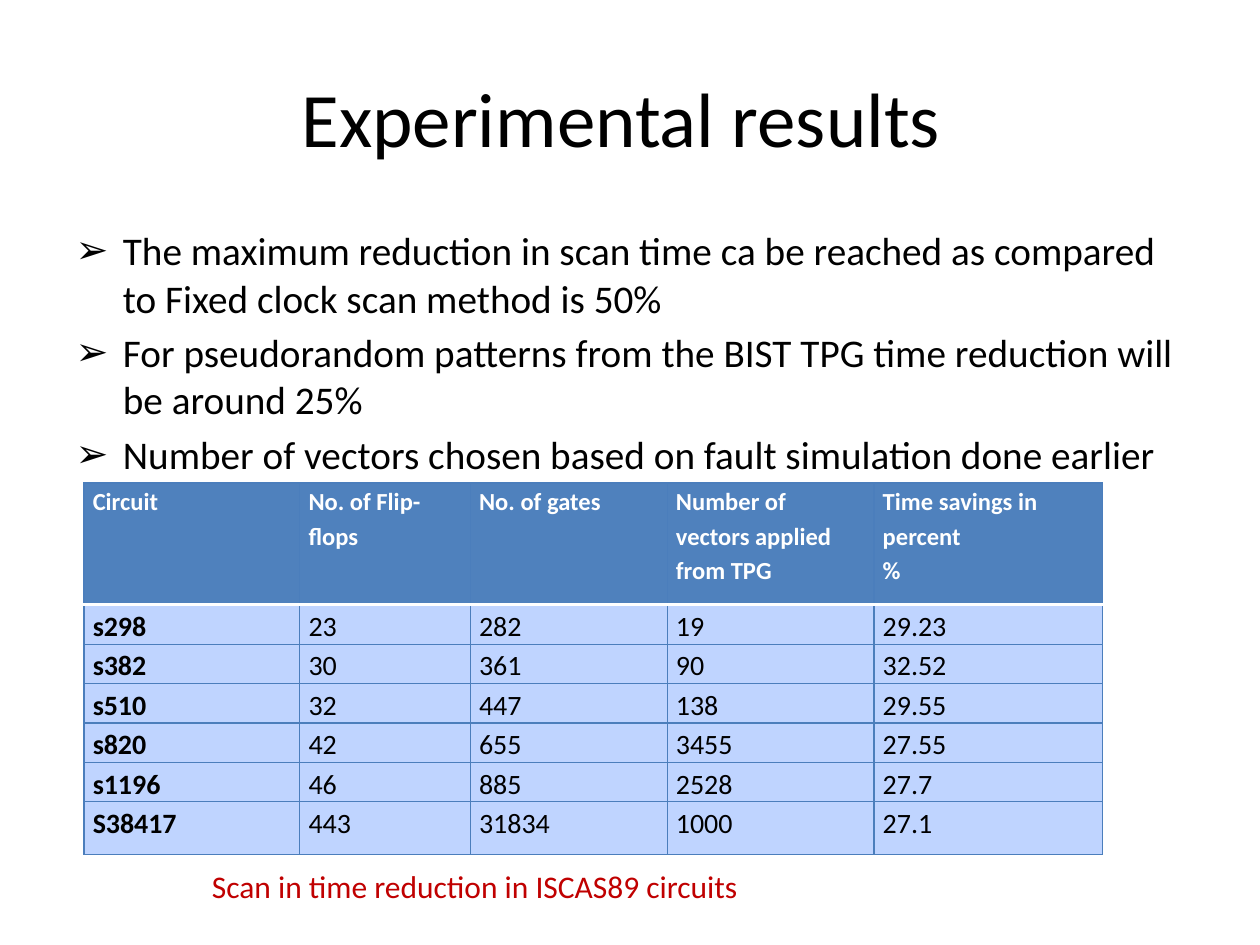
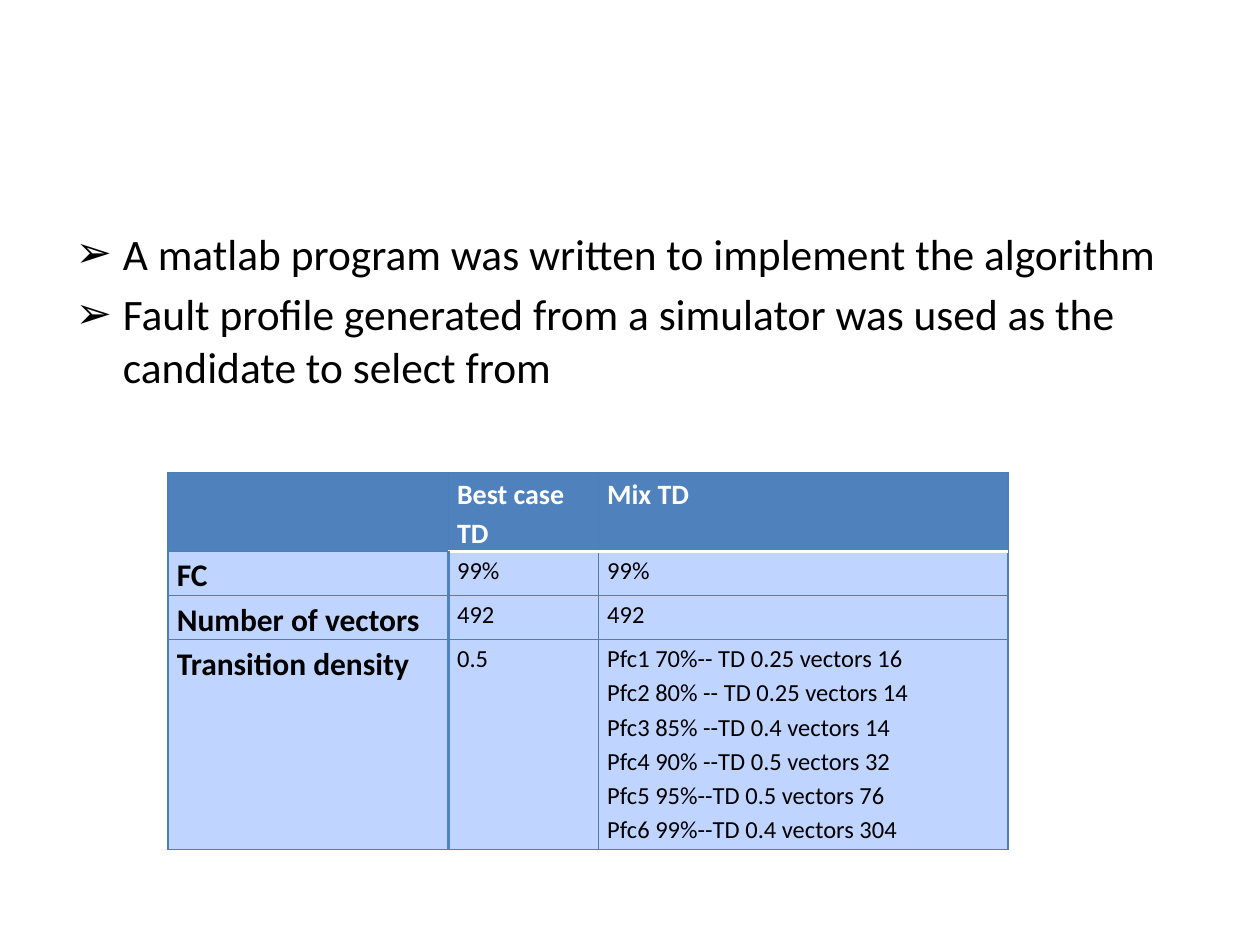
from lxml import etree
from pptx import Presentation
from pptx.dml.color import RGBColor
from pptx.enum.text import MSO_ANCHOR, MSO_AUTO_SIZE, PP_ALIGN
from pptx.oxml.ns import qn
from pptx.util import Inches, Pt

CENTER = PP_ALIGN.CENTER
MIDDLE = MSO_ANCHOR.MIDDLE
NO_FIT = MSO_AUTO_SIZE.NONE
TITLE_AND_CONTENT = 1
GRID_COLUMNS, GRID_ROWS = 120, 90

BLACK, WHITE, RED = "000000", "FFFFFF", "C00000"
HEADER_BLUE, CELL_BLUE, EDGE_BLUE = "4F81BD", "BFD4FF", "4B7EBC"
EDGE = (EDGE_BLUE, 0.75)
HEADER_RULE = (WHITE, 2)
STUB_RULE = (HEADER_BLUE, 2)


def color(value):
    """Turn a hex string into a colour."""
    return RGBColor.from_string(value)


def write(frame, text, size, ink=BLACK, bold=False, align=None, spacing=None):
    """Write each line of text as a formatted paragraph and return the paragraphs."""
    for index, line in enumerate(text.split("\n")):
        para = frame.add_paragraph() if index else frame.paragraphs[0]
        para.alignment = align
        para.line_spacing = spacing
        span = para.add_run()
        span.text = line
        span.font.name = "Calibri"
        span.font.size = Pt(size)
        span.font.bold = bold
        span.font.color.rgb = color(ink)
    return frame.paragraphs


def draw_edges(cell, edges):
    """Draw the left, right, top and bottom edges of a table cell."""
    properties = cell._tc.get_or_add_tcPr()
    for side, (ink, width) in zip("LRTB", edges):
        line = etree.SubElement(properties, qn("a:ln" + side), w=str(Pt(width)))
        fill = etree.SubElement(line, qn("a:solidFill"))
        etree.SubElement(fill, qn("a:srgbClr"), val=ink)


class SlideBuilder:
    """Hold the deck's grid and style and add elements to the current slide."""

    def __init__(self, deck):
        """Measure the grid on the deck's slide size."""
        self.deck = deck
        self.column = deck.slide_width / GRID_COLUMNS
        self.row = deck.slide_height / GRID_ROWS
        self.page = None

    def area(self, left, top, width, height):
        """Turn grid columns and rows into lengths."""
        return (round(left * self.column), round(top * self.row),
                round(width * self.column), round(height * self.row))

    def place(self, box, *cells):
        """Move a box to its grid cells."""
        box.left, box.top, box.width, box.height = self.area(*cells)

    def start(self, title=None):
        """Begin a slide, with a title if one is given."""
        layout = self.deck.slide_layouts[TITLE_AND_CONTENT]
        self.page = self.deck.slides.add_slide(layout)
        box = self.page.shapes.title
        if title is None:
            box.element.getparent().remove(box.element)
            return
        self.place(box, 6, 3.6, 108, 15)
        box.text_frame.vertical_anchor = MIDDLE
        write(box.text_frame, title, 44, align=CENTER)

    def bullets(self, items, size, height):
        """Fill the body placeholder with an arrow list."""
        box = self.page.placeholders[1]
        self.place(box, 6, 21, 108, height)
        box.text_frame.auto_size = NO_FIT
        for para in write(box.text_frame, "\n".join(items), size):
            etree.SubElement(para._p.get_or_add_pPr(), qn("a:buChar"), char="➢")

    def caption(self, text, *cells):
        """Add a red line of text."""
        box = self.page.shapes.add_textbox(*self.area(*cells))
        box.text_frame.word_wrap = True
        write(box.text_frame, text, 18, ink=RED)

    def table(self, left, top, widths, heights, records, sizes, ruled_stub=False):
        """Add a table; sizes are those of the header, the stub and the values."""
        cells = self.area(left, top, sum(widths), sum(heights))
        grid = self.page.shapes.add_table(len(heights), len(widths), *cells).table
        for column, width in zip(grid.columns, widths):
            column.width = round(width * self.column)
        for row, height in zip(grid.rows, heights):
            row.height = round(height * self.row)
        for r, record in enumerate(records):
            for c, text in enumerate(record):
                self.fill_cell(grid.cell(r, c), r, c, text, sizes, ruled_stub)

    def fill_cell(self, cell, r, c, text, sizes, ruled_stub):
        """Style a cell by its role: header, stub or value."""
        header, stub = r == 0, c == 0
        rule = EDGE if stub and ruled_stub else HEADER_RULE
        left = STUB_RULE if ruled_stub and c == 1 and not header else EDGE
        right = STUB_RULE if ruled_stub and stub and not header else EDGE
        draw_edges(cell, (left, right, rule if r == 1 else EDGE, rule if header else EDGE))
        cell.fill.solid()
        cell.fill.fore_color.rgb = color(HEADER_BLUE if header else CELL_BLUE)
        cell.margin_left = cell.margin_right = Inches(0.07)
        cell.margin_top = cell.margin_bottom = 0
        size = sizes[0 if header else 1 if stub else 2]
        write(cell.text_frame, text, size, ink=WHITE if header else BLACK,
              bold=header or stub, spacing=1.15)


def main():
    """Build the two results slides."""
    deck = Presentation()
    deck.slide_width, deck.slide_height = Inches(10), Inches(7.5)
    builder = SlideBuilder(deck)

    builder.start("Experimental results ")
    builder.bullets([
        "The maximum reduction in scan time ca be reached as compared to Fixed clock scan method is 50%",
        "For pseudorandom patterns from the BIST TPG time reduction will be around 25%",
        "Number of vectors chosen based on fault simulation done earlier",
    ], size=22.4, height=22)
    circuits = [
        ("Circuit", "No. of Flip-flops", "No. of gates",
         "Number of vectors applied from TPG", "Time savings in percent\n%"),
        ("s298", "23", "282", "19", "29.23"),
        ("s382", "30", "361", "90", "32.52"),
        ("s510", "32", "447", "138", "29.55"),
        ("s820", "42", "655", "3455", "27.55"),
        ("s1196", "46", "885", "2528", "27.7"),
        ("S38417", "443", "31834", "1000", "27.1"),
    ]
    builder.table(8, 46, [20.55, 16.25, 18.75, 19.7, 21.75],
                  [11.6] + [3.75] * 5 + [5], circuits, sizes=(14, 16, 16))
    builder.caption("Scan in time reduction in ISCAS89 circuits", 19, 82, 66, 4.8)

    builder.start()
    builder.bullets([
        "A matlab program was written to implement the algorithm",
        "Fault profile generated from a simulator was used as the candidate to select from",
    ], size=24.8, height=18)
    profiles = "\n".join([
        "Pfc1 70%-- TD 0.25 vectors 16",
        "Pfc2 80% -- TD 0.25 vectors 14",
        "Pfc3 85% --TD 0.4 vectors 14",
        "Pfc4 90% --TD 0.5 vectors 32",
        "Pfc5 95%--TD 0.5 vectors 76",
        "Pfc6 99%--TD 0.4 vectors 304",
    ])
    densities = [
        ("", "Best case TD", "Mix TD"),
        ("FC", "99%", "99%"),
        ("Number of vectors", "492", "492"),
        ("Transition density", "0.5", profiles),
    ]
    builder.table(16, 45, [26.7, 14.3, 39], [7.5, 4.2, 4.2, 20], densities,
                  sizes=(16, 18, 14), ruled_stub=True)

    deck.save("out.pptx")


if __name__ == "__main__":
    main()
